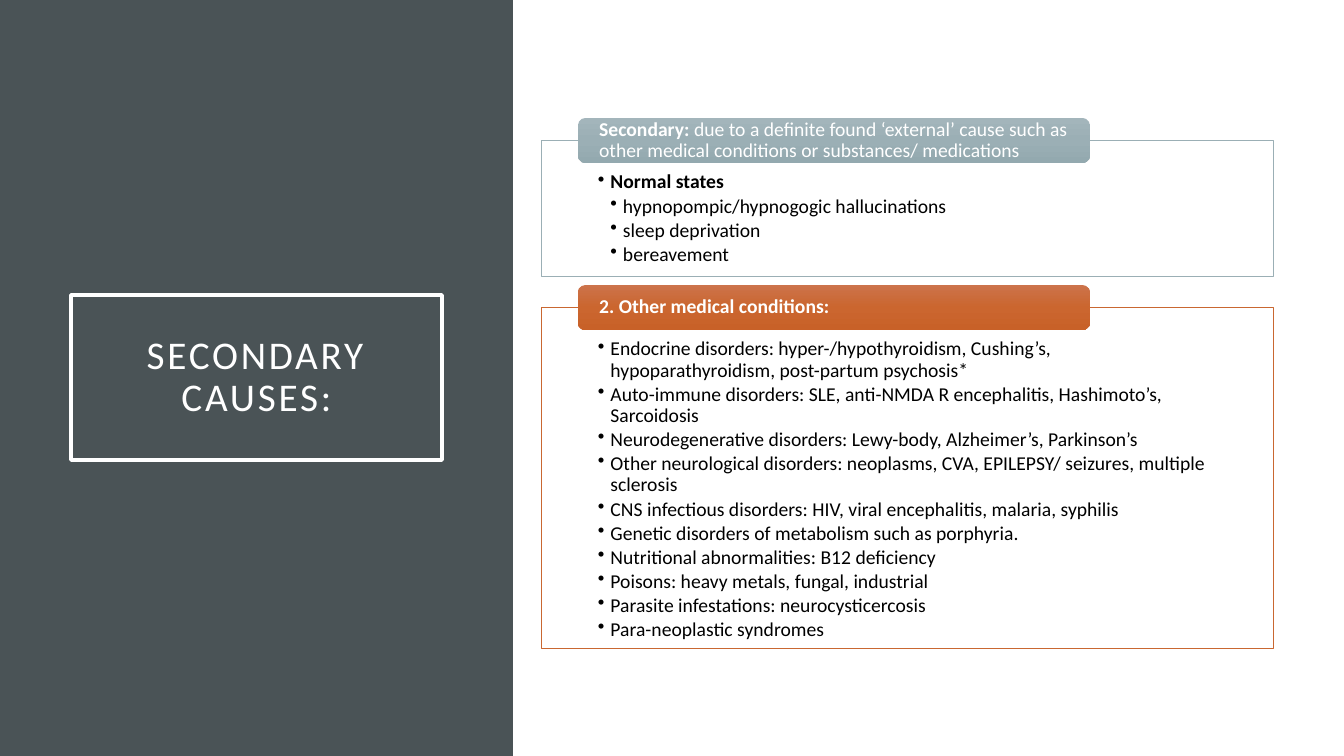
"""Build the slide on secondary causes of psychosis."""
import copy
import pptx
import pptx.util
import pptx.dml.color
import pptx.enum.shapes
import pptx.enum.text
import pptx.oxml
import pptx.oxml.ns
from lxml import etree

TITLE = "SECONDARY CAUSES:"
CARDS = [
    {
        "top": 140, "height": 136, "line": "9BAFB5",
        "grad": ["A3B5BB", "9BAFB5", "93A9AF"],
        "head": [("Secondary: ", True),
                 ("due to a definite found ‘external’ cause such as other "
                  "medical conditions or substances/ medications", False)],
        "items": [(1, "Normal states", True),
                  (2, "hypnopompic/hypnogogic hallucinations", False),
                  (2, "sleep deprivation", False),
                  (2, "bereavement", False)],
    },
    {
        "top": 307, "height": 341, "line": "C96731",
        "grad": ["CC734B", "CB662F", "C86128"],
        "head": [("2. Other medical conditions:", True)],
        "items": [(1, text, False) for text in (
            "Endocrine disorders: hyper-/hypothyroidism, Cushing’s, "
            "hypoparathyroidism, post-partum psychosis*",
            "Auto-immune disorders: SLE, anti-NMDA R encephalitis, "
            "Hashimoto’s, Sarcoidosis",
            "Neurodegenerative disorders: Lewy-body, Alzheimer’s, Parkinson’s",
            "Other neurological disorders: neoplasms, CVA, EPILEPSY/ seizures, "
            "multiple sclerosis",
            "CNS infectious disorders: HIV, viral encephalitis, malaria, syphilis",
            "Genetic disorders of metabolism such as porphyria.",
            "Nutritional abnormalities: B12 deficiency",
            "Poisons: heavy metals, fungal, industrial",
            "Parasite infestations: neurocysticercosis",
            "Para-neoplastic syndromes")],
    },
]
BOX_LEFT, BOX_WIDE = 541, 732
TAB_LEFT, TAB_WIDE, TAB_HIGH = 578, 512, 45
STEP = 12.5

SHAPE = pptx.enum.shapes.MSO_SHAPE
ALIGN = pptx.enum.text.PP_ALIGN
ANCHOR = pptx.enum.text.MSO_ANCHOR
Pt = pptx.util.Pt
qn = pptx.oxml.ns.qn


def px(size):
    """Turn pixels into EMU."""
    return round(size * 12192000 / 1344)


def rgb(code):
    """Turn a hex string into a colour."""
    return pptx.dml.color.RGBColor.from_string(code)


def add_box(slide, kind, left, top, width, height):
    """Add a preset shape without shadow or line."""
    box = slide.shapes.add_shape(kind, px(left), px(top), px(width), px(height))
    box.shadow.inherit = False
    box.line.fill.background()
    return box


def set_solid(box, code):
    """Fill a shape with one colour."""
    box.fill.solid()
    box.fill.fore_color.rgb = rgb(code)


def set_grad(box, codes):
    """Fill a shape with evenly spaced colours from top to bottom."""
    fill = box.fill
    fill.gradient()
    fill.gradient_angle = 270
    stops = box.element.spPr.find(".//" + qn("a:gsLst"))
    stops.insert(1, copy.deepcopy(stops[0]))
    for i, (stop, code) in enumerate(zip(fill.gradient_stops, codes)):
        stop.position = i / (len(codes) - 1)
        stop.color.rgb = rgb(code)


def set_frame(shape, anchor, left, top, right, low):
    """Set the anchor and insets of a shape's text."""
    frame = shape.text_frame
    frame.word_wrap = True
    frame.auto_size = pptx.enum.text.MSO_AUTO_SIZE.NONE
    frame.vertical_anchor = anchor
    frame.margin_left, frame.margin_top = px(left), px(top)
    frame.margin_right, frame.margin_bottom = px(right), px(low)
    return frame


def set_font(run, size, code, bold=False):
    """Format one run."""
    font = run.font
    font.name, font.size, font.bold = "Calibri", Pt(size), bold
    font.color.rgb = rgb(code)


def add_list(frame, items):
    """Write bulleted items, indented by level."""
    frame.text = "\n".join(text for _, text, _ in items)
    for para, (level, _, bold) in zip(frame.paragraphs, items):
        para.level = level
        para.alignment = ALIGN.LEFT
        para.line_spacing = 0.9
        para.space_after = Pt(2.1)
        props = para._p.get_or_add_pPr()
        props.set("marL", str(px(level * STEP)))
        props.set("indent", str(px(-STEP)))
        etree.SubElement(props, qn("a:buChar")).set("char", "•")
        set_font(para.runs[0], 14, "000000", bold)


def add_card(slide, card):
    """Add an outlined list with a tab over its upper edge."""
    box = add_box(slide, SHAPE.RECTANGLE, BOX_LEFT, card["top"],
                  BOX_WIDE, card["height"])
    set_solid(box, "FFFFFF")
    tint = box.element.spPr.find(".//" + qn("a:srgbClr"))
    etree.SubElement(tint, qn("a:alpha")).set("val", "90000")
    box.line.color.rgb = rgb(card["line"])
    box.line.width = Pt(0.5)
    add_list(set_frame(box, ANCHOR.TOP, 57, 32, 57, 11), card["items"])

    tab = add_box(slide, SHAPE.ROUNDED_RECTANGLE, TAB_LEFT,
                  card["top"] - TAB_HIGH // 2, TAB_WIDE, TAB_HIGH)
    set_grad(tab, card["grad"])
    para = set_frame(tab, ANCHOR.MIDDLE, 19, 0, 19, 0).paragraphs[0]
    para.alignment = ALIGN.LEFT
    para.line_spacing = 0.9
    for text, bold in card["head"]:
        run = para.add_run()
        run.text = text
        set_font(run, 14, "FFFFFF", bold)


def add_title(slide):
    """Place the framed title on its dark panel."""
    panel = add_box(slide, SHAPE.RECTANGLE, 0, 0, 513, 756)
    set_solid(panel, "4A5356")
    title = slide.shapes.title
    title.element.addprevious(panel.element)
    title.left, title.top = px(71), px(295)
    title.width, title.height = px(371), px(165)
    title.line.color.rgb = rgb("FFFFFF")
    title.line.width = Pt(2.5)
    frame = set_frame(title, ANCHOR.MIDDLE, 20, 20, 20, 20)
    frame.text = TITLE
    para = frame.paragraphs[0]
    para.alignment = ALIGN.CENTER
    para.line_spacing = 0.9
    set_font(para.runs[0], 28, "FFFFFF")
    para.runs[0].font._element.set("spc", "200")


def main():
    """Build and save the deck."""
    deck = pptx.Presentation()
    deck.slide_width, deck.slide_height = px(1344), px(756)
    slide = deck.slides.add_slide(deck.slide_layouts[5])
    add_title(slide)
    for card in CARDS:
        add_card(slide, card)
    deck.save("out.pptx")


if __name__ == "__main__":
    main()
